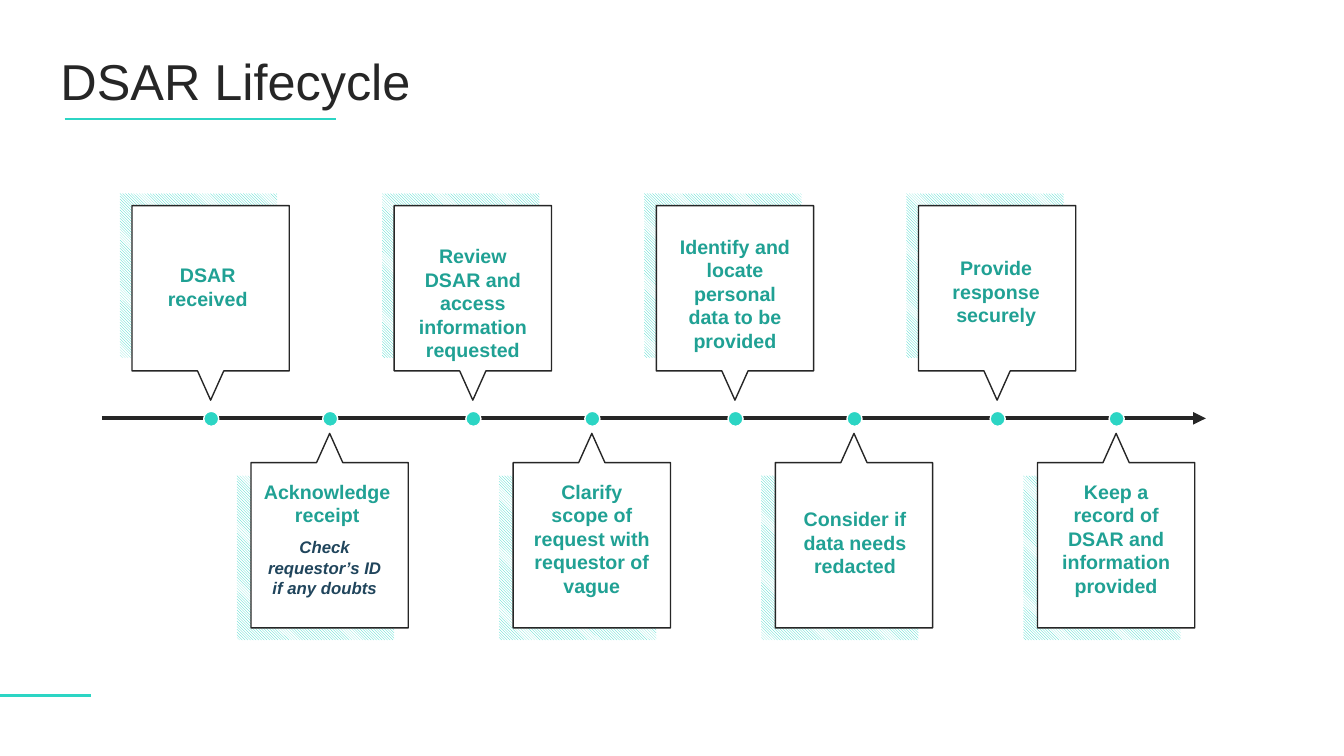
from lxml import etree
from pptx import Presentation
from pptx.dml.color import RGBColor
from pptx.enum.dml import MSO_PATTERN
from pptx.enum.shapes import MSO_CONNECTOR, MSO_SHAPE
from pptx.enum.text import MSO_ANCHOR, MSO_AUTO_SIZE, PP_ALIGN
from pptx.oxml.ns import qn
from pptx.util import Inches, Pt

TURQUOISE = RGBColor(0x2C, 0xD5, 0xC4)
TEAL = RGBColor(0x20, 0xA1, 0x94)
NAVY = RGBColor(0x20, 0x45, 0x5C)
CHARCOAL = RGBColor(0x26, 0x26, 0x26)
WHITE = RGBColor(0xFF, 0xFF, 0xFF)

STRAIGHT = MSO_CONNECTOR.STRAIGHT
RECTANGLE = MSO_SHAPE.RECTANGLE
OVAL = MSO_SHAPE.OVAL
HATCH = MSO_PATTERN.LIGHT_DOWNWARD_DIAGONAL
MIDDLE = MSO_ANCHOR.MIDDLE
GROW = MSO_AUTO_SIZE.SHAPE_TO_FIT_TEXT
LEFT = PP_ALIGN.LEFT
CENTER = PP_ALIGN.CENTER

TITLE_ONLY = 5
STEP = 2.6
CARD_WIDTH = 1.56
CARD_HEIGHT = 1.64
POINTER_HEIGHT = 0.29
POINTER_HALF = 0.13

UPPER_STAGES = [
    (1.35, 2.56, 0.57, ["DSAR", "received"]),
    (3.98, 2.37, 1.28, ["Review DSAR and access information requested"]),
    (6.58, 2.28, 1.28, ["Identify and locate personal data to be provided"]),
    (9.17, 2.49, 0.81, ["Provide response securely"]),
]
LOWER_STAGES = [
    (2.49, 4.71, 0.57, ["Acknowledge receipt"]),
    (5.16, 4.71, 1.28, ["Clarify scope of request with requestor of vague"]),
    (7.77, 4.98, 0.81, ["Consider if data needs redacted"]),
    (10.36, 4.71, 1.28, ["Keep a record of DSAR and information provided"]),
]


class TimelineSlide:
    font_name = "Arial"

    def __init__(self, page):
        self.page = page
        self.shapes = page.shapes

    def add_span(self, para, text, size, color, bold=False, italic=False):
        span = para.add_run()
        span.text = text
        span.font.name = self.font_name
        span.font.size = Pt(size)
        span.font.color.rgb = color
        span.font.bold = bold
        span.font.italic = italic

    def title(self, text):
        box = self.shapes.title
        box.left, box.top = Inches(0.53), Inches(0.4)
        box.width, box.height = Inches(12.24), Inches(0.88)
        frame = box.text_frame
        frame.word_wrap = True
        frame.vertical_anchor = MIDDLE
        frame.margin_left = frame.margin_right = Inches(0.07)
        frame.margin_top = frame.margin_bottom = Inches(0.04)
        para = frame.paragraphs[0]
        para.alignment = LEFT
        para.line_spacing = 0.9
        self.add_span(para, text, 36, CHARCOAL)

    def line(self, start, end, y, color, width, arrow=False):
        line = self.shapes.add_connector(
            STRAIGHT, Inches(start), Inches(y), Inches(end), Inches(y))
        line.line.color.rgb = color
        line.line.width = Pt(width)
        properties = line._element.spPr
        if arrow:
            outline = properties.find(qn("a:ln"))
            etree.SubElement(outline, qn("a:tailEnd"), type="triangle")
        etree.SubElement(properties, qn("a:effectLst"))

    def dot(self, left):
        dot = self.shapes.add_shape(
            OVAL, Inches(left), Inches(4.08), Inches(0.15), Inches(0.15))
        dot.shadow.inherit = False
        dot.fill.solid()
        dot.fill.fore_color.rgb = TURQUOISE
        dot.line.color.rgb = WHITE
        dot.line.width = Pt(1)

    def hatch(self, left, top):
        panel = self.shapes.add_shape(
            RECTANGLE, Inches(left), Inches(top), Inches(CARD_WIDTH), Inches(1.63))
        panel.shadow.inherit = False
        panel.fill.patterned()
        panel.fill.pattern = HATCH
        panel.fill.fore_color.rgb = TURQUOISE
        panel.fill.back_color.rgb = WHITE
        panel.line.fill.background()

    def callout(self, left, far_edge, direction):
        right = left + CARD_WIDTH
        middle = left + CARD_WIDTH / 2
        near_edge = far_edge + direction * CARD_HEIGHT
        tip = near_edge + direction * POINTER_HEIGHT
        outline = [
            (right, far_edge), (right, near_edge),
            (middle + POINTER_HALF, near_edge), (middle, tip),
            (middle - POINTER_HALF, near_edge), (left, near_edge),
        ]
        builder = self.shapes.build_freeform(Inches(left), Inches(far_edge))
        builder.add_line_segments([(Inches(x), Inches(y)) for x, y in outline])
        card = builder.convert_to_shape()
        card.shadow.inherit = False
        card.fill.solid()
        card.fill.fore_color.rgb = WHITE
        card.line.color.rgb = CHARCOAL
        card.line.width = Pt(1)

    def label(self, left, top, width, height, lines, size=14, color=TEAL, italic=False):
        box = self.shapes.add_textbox(
            Inches(left), Inches(top), Inches(width), Inches(height))
        frame = box.text_frame
        frame.word_wrap = True
        frame.auto_size = GROW
        for index, text in enumerate(lines):
            para = frame.add_paragraph() if index else frame.paragraphs[0]
            para.alignment = CENTER
            self.add_span(para, text, size, color, bold=True, italic=italic)


def main():
    deck = Presentation()
    deck.slide_width, deck.slide_height = Inches(13.33), Inches(7.5)
    slide = TimelineSlide(deck.slides.add_slide(deck.slide_layouts[TITLE_ONLY]))

    slide.line(0.64, 3.33, 1.18, TURQUOISE, 1.5)
    slide.line(0, 0.9, 6.9, TURQUOISE, 1.5)
    slide.title("DSAR Lifecycle")
    slide.line(1.01, 11.96, 4.15, CHARCOAL, 3, arrow=True)

    for index, (left, top, height, lines) in enumerate(UPPER_STAGES):
        offset = index * STEP
        slide.dot(2.02 + offset)
        slide.hatch(1.19 + offset, 1.92)
        slide.callout(1.31 + offset, 2.04, 1)
        slide.label(left, top, 1.42, height, lines)

    for index, (left, top, height, lines) in enumerate(LOWER_STAGES):
        offset = index * STEP
        slide.dot(3.2 + offset)
        slide.hatch(2.35 + offset, 4.72)
        slide.callout(2.49 + offset, 6.23, -1)
        slide.label(left, top, 1.42 if index else 1.51, height, lines)

    slide.label(2.51, 5.28, 1.42, 0.71, ["Check requestor’s ID if any doubts"],
                size=12, color=NAVY, italic=True)
    deck.save("out.pptx")


if __name__ == "__main__":
    main()
